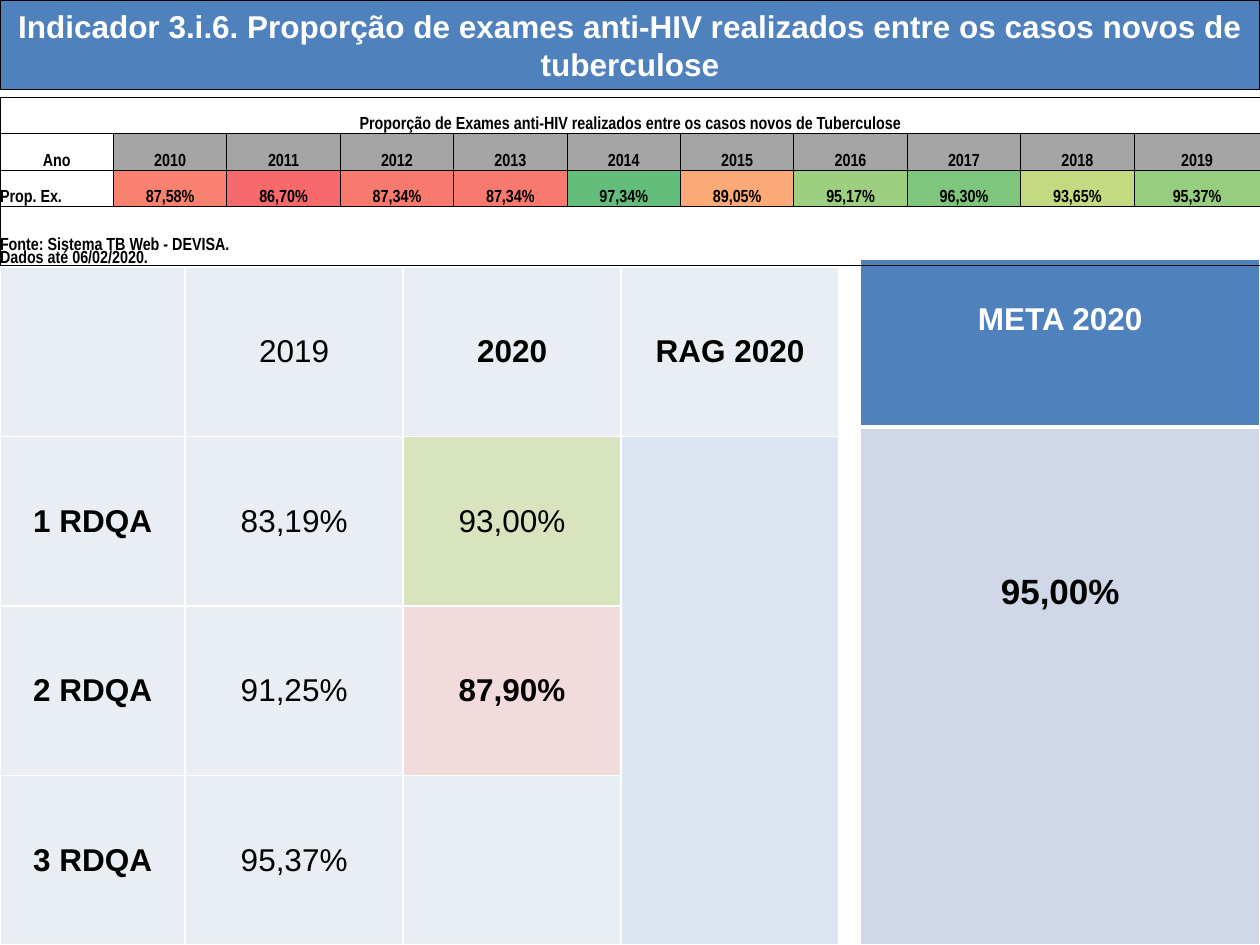
from lxml import etree
from pptx import Presentation
from pptx.dml.color import RGBColor
from pptx.enum import text
from pptx.oxml import ns
from pptx.util import Inches, Pt

BLACK = RGBColor(0x00, 0x00, 0x00)
WHITE = RGBColor(0xFF, 0xFF, 0xFF)
BLUE = RGBColor(0x4F, 0x81, 0xBD)
PALE = RGBColor(0xE9, 0xED, 0xF4)
PALE_BLUE = RGBColor(0xDC, 0xE6, 0xF2)
GREEN = RGBColor(0xD7, 0xE4, 0xBD)
PINK = RGBColor(0xF2, 0xDC, 0xDB)
GOAL = RGBColor(0xD0, 0xD8, 0xE8)
GRAY = RGBColor(0xA5, 0xA5, 0xA5)

CENTER = text.PP_ALIGN.CENTER
MIDDLE = text.MSO_ANCHOR.MIDDLE
BOTTOM = text.MSO_ANCHOR.BOTTOM


def make_table(slide, left, top, widths, heights):
    frame = slide.shapes.add_table(
        len(heights), len(widths), Inches(left), Inches(top),
        Inches(sum(widths)), Inches(sum(heights)))
    table = frame.table
    table.first_row = False
    table.horz_banding = False
    for column, width in zip(table.columns, widths):
        column.width = Inches(width)
    for row, height in zip(table.rows, heights):
        row.height = Inches(height)
    return table


def fill_cell(cell, words, fill, border, widths, size, font="Arial", bold=True,
              color=BLACK, anchor=MIDDLE, align=CENTER, margin_top=0):
    properties = cell._tc.get_or_add_tcPr()
    for side, width in zip("LRTB", widths):
        line = etree.SubElement(properties, ns.qn(f"a:ln{side}"), w=str(Pt(width)))
        solid = etree.SubElement(line, ns.qn("a:solidFill"))
        etree.SubElement(solid, ns.qn("a:srgbClr"), val=str(border))
    if fill is None:
        cell.fill.background()
    else:
        cell.fill.solid()
        cell.fill.fore_color.rgb = fill
    cell.margin_left = cell.margin_right = cell.margin_bottom = 0
    cell.margin_top = Inches(margin_top)
    cell.vertical_anchor = anchor
    paragraph = cell.text_frame.paragraphs[0]
    paragraph.alignment = align
    paragraph.font.size = Pt(size)
    for index, part in enumerate(words.splitlines()):
        if index:
            paragraph.add_line_break()
            paragraph.line_spacing = 0.8
        run = paragraph.add_run()
        run.text = part
        run.font.name = font
        run.font.size = Pt(size)
        run.font.bold = bold
        run.font.color.rgb = color


presentation = Presentation()
presentation.slide_width = Inches(10)
presentation.slide_height = Inches(7.5)
slide = presentation.slides.add_slide(presentation.slide_layouts[5])

title = slide.shapes.title
title.left, title.top = Inches(0), Inches(0)
title.width, title.height = Inches(10), Inches(0.71)
title.fill.solid()
title.fill.fore_color.rgb = BLUE
title.line.color.rgb = BLACK
title.line.width = Pt(0.75)
title.text_frame.auto_size = text.MSO_AUTO_SIZE.NONE
title.text_frame.vertical_anchor = MIDDLE
paragraph = title.text_frame.paragraphs[0]
paragraph.alignment = CENTER
run = paragraph.add_run()
run.text = ("Indicador 3.i.6. Proporção de exames anti-HIV realizados "
            "entre os casos novos de tuberculose")
run.font.name = "Arial"
run.font.size = Pt(18)
run.font.bold = True
run.font.color.rgb = WHITE

quarters = [
    ["", "2019", "2020", "RAG 2020"],
    ["1 RDQA", "83,19%", "93,00%", ""],
    ["2 RDQA", "91,25%", "87,90%", ""],
    ["3 RDQA", "95,37%", "", ""],
]
quarter_fills = {(1, 2): GREEN, (2, 2): PINK, (1, 3): PALE_BLUE,
                 (2, 3): PALE_BLUE, (3, 3): PALE_BLUE}
regular_words = {"2019", "83,19%", "91,25%", "95,37%", "93,00%"}
quarter_table = make_table(slide, 0, 2.12, [1.47] + [1.73] * 3, [1.345] * 4)
for i, row in enumerate(quarters):
    for j, words in enumerate(row):
        fill_cell(quarter_table.cell(i, j), words, quarter_fills.get((i, j), PALE),
                  WHITE, [1] * 4, 18, bold=words not in regular_words)
quarter_table.cell(1, 3).merge(quarter_table.cell(3, 3))

goal_table = make_table(slide, 6.83, 2.06, [3.17], [1.33, 4.11])
fill_cell(goal_table.cell(0, 0), "META 2020", BLUE, WHITE, [1, 1, 1, 3], 18,
          color=WHITE, anchor=text.MSO_ANCHOR.TOP, margin_top=0.34)
fill_cell(goal_table.cell(1, 0), "95,00%", GOAL, WHITE, [1, 1, 3, 1], 20,
          anchor=text.MSO_ANCHOR.TOP, margin_top=1.16)

history = [
    ("2010", "87,58%", "F9816F"), ("2011", "86,70%", "F8696B"),
    ("2012", "87,34%", "F87A6E"), ("2013", "87,34%", "F87A6E"),
    ("2014", "97,34%", "63BE7B"), ("2015", "89,05%", "FBAA77"),
    ("2016", "95,17%", "9CCF7F"), ("2017", "96,30%", "7FC67D"),
    ("2018", "93,65%", "C4DA81"), ("2019", "95,37%", "97CD7E"),
]
blanks = [("", None)] * len(history)
history_rows = [
    [("Proporção de Exames anti-HIV realizados entre os casos novos de Tuberculose",
      None)] + blanks,
    [("Ano", None)] + [(year, GRAY) for year, value, shade in history],
    [("Prop. Ex.", None)] + [(value, RGBColor.from_string(shade))
                             for year, value, shade in history],
    [("Fonte: Sistema TB Web - DEVISA.\nDados até 06/02/2020.", None)] + blanks,
]
history_table = make_table(slide, 0, 0.77, [0.9] * 10 + [1], [0.29] * 3 + [0.47])
for i, row in enumerate(history_rows):
    for j, (words, fill) in enumerate(row):
        align = text.PP_ALIGN.LEFT if i > 1 and j == 0 else CENTER
        fill_cell(history_table.cell(i, j), words, fill, BLACK, [0.5] * 4, 10,
                  font="Arial Narrow", anchor=BOTTOM, align=align)
for i in (0, 3):
    history_table.cell(i, 0).merge(history_table.cell(i, 10))

presentation.save("out.pptx")
